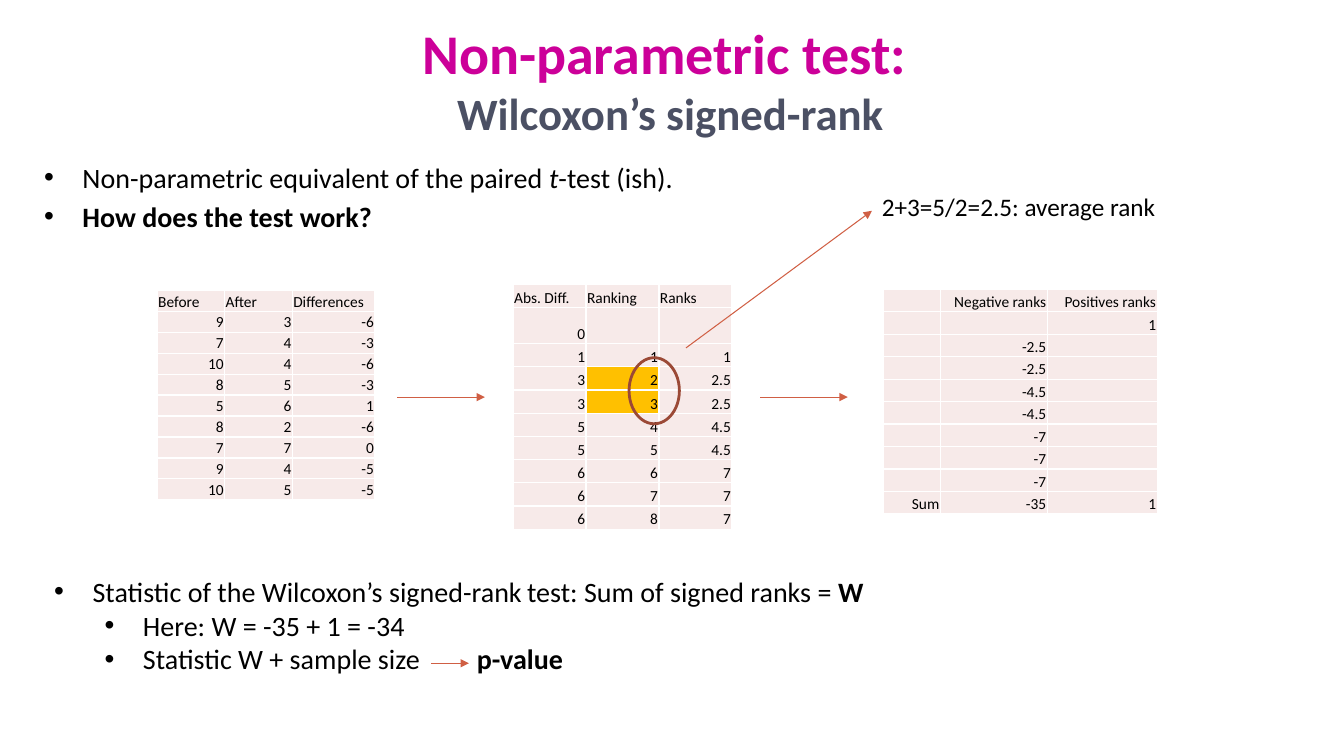
from collections import namedtuple

from lxml import etree
from pptx import Presentation
from pptx.dml.color import RGBColor
from pptx.enum.shapes import MSO_CONNECTOR, MSO_SHAPE
from pptx.enum.text import MSO_ANCHOR, PP_ALIGN
from pptx.oxml.ns import qn
from pptx.util import Inches, Pt

LEFT, CENTER, RIGHT = PP_ALIGN.LEFT, PP_ALIGN.CENTER, PP_ALIGN.RIGHT
TOP, BOTTOM = MSO_ANCHOR.TOP, MSO_ANCHOR.BOTTOM
STRAIGHT, OVAL = MSO_CONNECTOR.STRAIGHT, MSO_SHAPE.OVAL
WIDTH, HEIGHT = Inches(13.33), Inches(7.5)
FONT = "Calibri"
BLACK, WHITE, MAGENTA, SLATE = "000000", "FFFFFF", "CC0099", "4B5064"
BLUSH, AMBER, CORAL, RUST = "F7EAE9", "FFC000", "D05F44", "9B4936"
INDENT = 0.38

DIFFERENCES = [
    ["Before", "After", "Differences"],
    [9, 3, -6], [7, 4, -3], [10, 4, -6], [8, 5, -3], [5, 6, 1],
    [8, 2, -6], [7, 7, 0], [9, 4, -5], [10, 5, -5],
]
RANKING = [
    ["Abs. Diff.", "Ranking", "Ranks"],
    [0, "", ""], [1, 1, 1], [3, 2, 2.5], [3, 3, 2.5], [5, 4, 4.5],
    [5, 5, 4.5], [6, 6, 7], [6, 7, 7], [6, 8, 7],
]
SIGNED_RANKS = [
    ["", "Negative ranks", "Positives ranks"],
    ["", "", 1],
    *[["", rank, ""] for rank in (-2.5, -2.5, -4.5, -4.5, -7, -7, -7)],
    ["Sum", -35, 1],
]


class Box(namedtuple("Box", "left top width height")):
    """A rectangle on the slide."""

    def point(self, across, down):
        """Return the point at the given shares of the box."""
        return int(self.left + across * self.width), int(self.top + down * self.height)

    def inner(self, across, down, wide, high):
        """Return a box given in shares of this one."""
        return Box(*self.point(across, down), int(wide * self.width), int(high * self.height))


def grid(column, row, columns, rows):
    """Return a box on a grid of 100 columns by 100 rows over the slide."""
    return Box(0, 0, WIDTH, HEIGHT).inner(column / 100, row / 100, columns / 100, rows / 100)


def color(value):
    """Turn a hex string into a colour."""
    return RGBColor.from_string(value)


def add_span(para, text, size=20, fill=BLACK, bold=False, italic=False, tracking=0):
    """Add formatted text to a paragraph."""
    span = para.add_run()
    span.text = text
    font = span.font
    font.name, font.size, font.bold, font.italic = FONT, Pt(size), bold, italic
    font.color.rgb = color(fill)
    if tracking:
        span._r.get_or_add_rPr().set("spc", str(tracking * 100))


def add_bullet(para, level=0):
    """Give a paragraph a hanging round bullet."""
    para.level = level
    props = para._p.get_or_add_pPr()
    props.set("marL", str(Inches(INDENT + level / 2)))
    props.set("indent", str(-Inches(INDENT)))
    etree.SubElement(props, qn("a:buFont"), typeface="Arial")
    etree.SubElement(props, qn("a:buChar"), char="•")


def add_text(page, box, lines, align=LEFT, bullets=(), before=0, wrap=True):
    """Add a text box whose lines are lists of (text, format) spans."""
    frame = page.shapes.add_textbox(*box).text_frame
    frame.word_wrap = wrap
    frame.vertical_anchor = TOP
    for index, line in enumerate(lines):
        para = frame.add_paragraph() if index else frame.paragraphs[0]
        para.alignment = align
        para.space_before = Pt(before)
        if bullets:
            add_bullet(para, bullets[index])
        for text, style in line:
            add_span(para, text, **style)


def add_arrow(page, start, end):
    """Draw a thin arrow between two points."""
    arrow = page.shapes.add_connector(STRAIGHT, *start, *end)
    arrow.line.color.rgb = color(CORAL)
    arrow.line.width = Pt(0.75)
    props = arrow._element.spPr
    etree.SubElement(props.find(qn("a:ln")), qn("a:tailEnd"), type="triangle")
    etree.SubElement(props, qn("a:effectLst"))


def fill_cell(cell, value, align, fill):
    """Write one table cell with its fill and white borders."""
    cell.margin_left = cell.margin_right = cell.margin_top = Inches(0.01)
    cell.margin_bottom = 0
    cell.vertical_anchor = BOTTOM
    cell.fill.solid()
    cell.fill.fore_color.rgb = color(fill)
    para = cell.text_frame.paragraphs[0]
    para.alignment = align
    if value == "":
        etree.SubElement(para._p, qn("a:endParaRPr"), sz="1100")
    else:
        add_span(para, str(value), size=11)
    props = cell._tc.get_or_add_tcPr()
    for place, side in enumerate("LRTB"):
        border = etree.Element(qn(f"a:ln{side}"), w=str(Pt(1)))
        paint = etree.SubElement(border, qn("a:solidFill"))
        etree.SubElement(paint, qn("a:srgbClr"), val=WHITE)
        props.insert(place, border)


def add_data_table(page, box, data, columns, rows, header=LEFT, marked=()):
    """Fill a box with a table sized by column and row weights."""
    table = page.shapes.add_table(len(data), len(columns), *box).table
    table.first_row = table.horz_banding = False
    for column, weight in zip(table.columns, columns):
        column.width = int(box.width * weight / sum(columns))
    for row, weight in zip(table.rows, rows):
        row.height = int(box.height * weight / sum(rows))
    for i, values in enumerate(data):
        for j, value in enumerate(values):
            fill = AMBER if (i, j) in marked else BLUSH
            fill_cell(table.cell(i, j), value, RIGHT if i else header, fill)


def add_title(page, box):
    """Add the two-line heading."""
    add_text(page, box, [
        [("Non-parametric test: ", dict(size=40, fill=MAGENTA, bold=True))],
        [("Wilcoxon’s signed-rank", dict(size=32, fill=SLATE, bold=True))],
    ], align=CENTER)


def add_intro(page, box):
    """Add the opening bullets."""
    add_text(page, box, [
        [("Non-parametric equivalent of the paired ", {}), ("t", dict(italic=True)),
         ("-test (ish).", {})],
        [("How does the test work?", dict(bold=True))],
    ], bullets=(0, 0), before=4)


def add_ranking(page, box):
    """Add the ranking table with its circled tie and the note on it."""
    add_data_table(page, box, RANKING, (1, 1, 1), (23, 36) + (23,) * 8,
                   marked={(3, 1), (4, 1)})
    circle = page.shapes.add_shape(OVAL, *box.inner(0.53, 0.3, 0.23, 0.27))
    circle.shadow.inherit = False
    circle.fill.background()
    circle.line.color.rgb = color(RUST)
    circle.line.width = Pt(2)
    add_arrow(page, box.point(0.79, 0.26), box.point(1.64, -0.3))
    add_text(page, box.inner(1.64, -0.4, 1.36, 0.16),
             [[("2+3=5/2=2.5: average rank", dict(size=18))]], wrap=False)


def add_conclusion(page, box):
    """Add the closing bullets and the arrow to the p-value."""
    add_text(page, box, [
        [("Statistic of the Wilcoxon’s signed-rank", {}), (" ", dict(size=16)),
         ("test: Sum of signed ranks = ", {}), ("W", dict(bold=True))],
        [("Here: W = -35 + 1 = -34", {})],
        [("Statistic W + sample size", {}), (" ", dict(tracking=36)),
         ("p-value", dict(bold=True))],
    ], bullets=(0, 1, 1))
    add_arrow(page, box.point(0.41, 0.71), box.point(0.45, 0.71))


def main():
    """Build and save the slide."""
    deck = Presentation()
    deck.slide_width, deck.slide_height = WIDTH, HEIGHT
    page = deck.slides.add_slide(deck.slide_layouts[6])
    add_title(page, grid(13.73, 1.73, 72.3, 17.87))
    add_intro(page, grid(2.55, 20.53, 72.68, 8.8))
    add_data_table(page, grid(11.7, 38.4, 16.2, 27.73), DIFFERENCES, (67, 67, 82), (1,) * 10)
    add_ranking(page, grid(38.18, 37.6, 16.28, 32.4))
    add_data_table(page, grid(65.7, 38.27, 20.4, 29.73), SIGNED_RANKS, (57, 106, 109),
                   (1,) * 10, header=RIGHT)
    for column in (29.55, 56.55):
        step = grid(column, 52.53, 6.53, 0)
        add_arrow(page, step.point(0, 0), step.point(1, 0))
    add_conclusion(page, grid(3.3, 75.33, 70.2, 17.47))
    deck.save("out.pptx")


if __name__ == "__main__":
    main()
